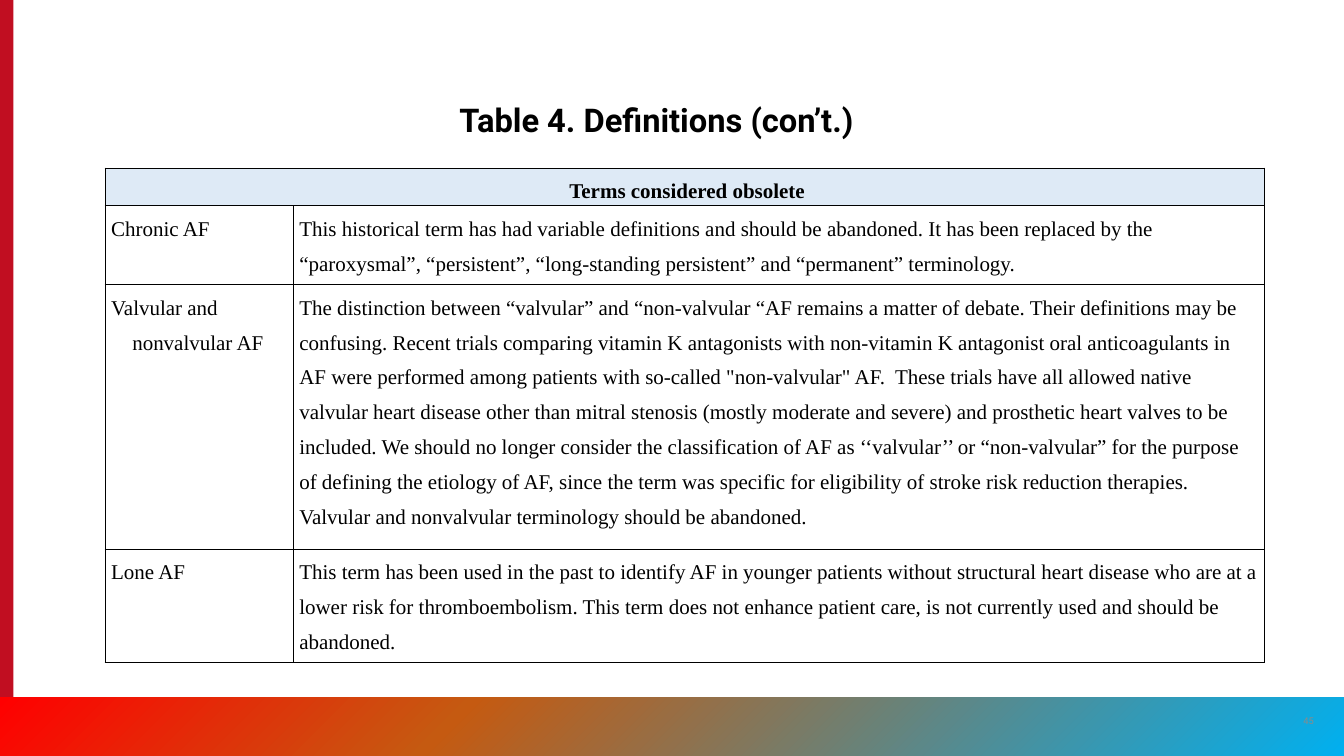
import lxml.etree
import pptx
import pptx.dml.color
import pptx.enum.shapes
import pptx.enum.text
import pptx.oxml
import pptx.oxml.ns
import pptx.util

Cm = pptx.util.Cm
Pt = pptx.util.Pt
ALIGN = pptx.enum.text.PP_ALIGN
ANCHOR = pptx.enum.text.MSO_ANCHOR
RECTANGLE = pptx.enum.shapes.MSO_SHAPE.RECTANGLE
SLIDE_WIDTH, SLIDE_HEIGHT = 40.64, 22.86
BAND_HEIGHT = 1.78
COLUMN_WIDTHS = (5.69, 29.36)
ROW_HEIGHTS = (0.81, 2.39, 3.3, 2.39)
HEADING = " Terms considered obsolete"
TERMS = (
    ("Chronic AF",
     "This historical term has had variable definitions and should be abandoned. "
     "It has been replaced by the “paroxysmal”, “persistent”, “long-standing persistent” "
     "and “permanent” terminology."),
    ("Valvular and nonvalvular AF",
     "The distinction between “valvular” and “non-valvular “AF remains a matter of debate. "
     "Their definitions may be confusing. Recent trials comparing vitamin K antagonists with "
     "non-vitamin K antagonist oral anticoagulants in AF were performed among patients with "
     "so-called \"non-valvular\" AF.  These trials have all allowed native valvular heart "
     "disease other than mitral stenosis (mostly moderate and severe) and prosthetic heart "
     "valves to be included. We should no longer consider the classification of AF as "
     "‘‘valvular’’ or “non-valvular” for the purpose of defining the etiology of AF, since the "
     "term was specific for eligibility of stroke risk reduction therapies. Valvular and "
     "nonvalvular terminology should be abandoned. "),
    ("Lone AF",
     "This term has been used in the past to identify AF in younger patients without "
     "structural heart disease who are at a lower risk for thromboembolism. This term does "
     "not enhance patient care, is not currently used and should be abandoned."),
)


def color(value):
    """Return the colour for a hex string."""
    return pptx.dml.color.RGBColor.from_string(value)


def style_font(paragraph, name, size, value, bold=False):
    """Set the font of a whole paragraph."""
    font = paragraph.font
    font.name, font.size, font.bold = name, Pt(size), bold
    font.color.rgb = color(value)


def add_block(slide, left, top, width, height):
    """Add a rectangle without line or shadow."""
    shape = slide.shapes.add_shape(RECTANGLE, Cm(left), Cm(top), Cm(width), Cm(height))
    shape.shadow.inherit = False
    shape.line.fill.background()
    return shape


def add_side_bar(slide, left, top, width, height):
    """Add the red bar on the left edge."""
    bar = add_block(slide, left, top, width, height)
    bar.fill.solid()
    bar.fill.fore_color.rgb = color("C10E21")


def add_bottom_band(slide, left, top, width, height):
    """Add the gradient band along the bottom."""
    band = add_block(slide, left, top, width, height)
    band.rotation = 180
    band.fill.gradient()
    band.fill.gradient_angle = 315
    first, last = band.fill.gradient_stops
    first.color.rgb, first.position = color("00B0F0"), 0
    last.color.rgb, last.position = color("FF0000"), 1
    stops = band.fill._fill._gradFill.find(pptx.oxml.ns.qn("a:gsLst"))
    stops.insert(1, pptx.oxml.parse_xml(
        f'<a:gs {pptx.oxml.ns.nsdecls("a")} pos="66000"><a:srgbClr val="C55A11"/></a:gs>'))


def add_page_number(slide, left, top, size):
    """Add the page number in a square box."""
    frame = slide.shapes.add_textbox(Cm(left), Cm(top), Cm(size), Cm(size)).text_frame
    frame.word_wrap = True
    frame.vertical_anchor = ANCHOR.MIDDLE
    paragraph = frame.paragraphs[0]
    paragraph.text = "45"
    paragraph.alignment = ALIGN.CENTER
    style_font(paragraph, "Roboto", 8, "8A8B8A")


def fill_title(slide, left, top, width, height):
    """Place and fill the title placeholder."""
    title = slide.shapes.title
    title.left, title.top, title.width, title.height = map(Cm, (left, top, width, height))
    frame = title.text_frame
    frame.auto_size = pptx.enum.text.MSO_AUTO_SIZE.NONE
    frame.vertical_anchor = ANCHOR.BOTTOM
    paragraph = frame.paragraphs[0]
    paragraph.text = "Table 4. Definitions (con’t.)"
    paragraph.alignment = ALIGN.LEFT
    paragraph.line_spacing = 0.9
    style_font(paragraph, "Roboto", 28, "000000", True)


def format_cell(cell, fill=None):
    """Set the margins, borders and fill of a table cell."""
    cell.margin_left = cell.margin_right = Cm(0.18)
    cell.margin_top = cell.margin_bottom = 0
    properties = cell._tc.get_or_add_tcPr()
    for side in "LRTB":
        properties.append(pptx.oxml.parse_xml(
            f'<a:ln{side} {pptx.oxml.ns.nsdecls("a")} w="12700"><a:solidFill>'
            f'<a:srgbClr val="000000"/></a:solidFill></a:ln{side}>'))
    if fill:
        cell.fill.solid()
        cell.fill.fore_color.rgb = color(fill)
    else:
        cell.fill.background()


def write_cell(cell, text, heading=False, hanging=False):
    """Write one paragraph into a table cell."""
    paragraph = cell.text_frame.paragraphs[0]
    paragraph.text = text
    paragraph.line_spacing = 1.5
    if heading:
        paragraph.alignment = ALIGN.CENTER
    else:
        paragraph.space_before, paragraph.space_after = Pt(6), Pt(14)
    if hanging:
        properties = paragraph._p.get_or_add_pPr()
        properties.set("marL", str(Cm(0.64)))
        properties.set("indent", str(-Cm(0.64)))
    style_font(paragraph, "Times New Roman", 18, "000000", heading)


def add_terms_table(slide, left, top, width, height):
    """Add the table of obsolete terms."""
    graphic = slide.shapes.add_table(
        len(ROW_HEIGHTS), len(COLUMN_WIDTHS), Cm(left), Cm(top), Cm(width), Cm(height))
    table = graphic.table
    table.first_row = table.horz_banding = False
    for column, column_width in zip(table.columns, COLUMN_WIDTHS):
        column.width = Cm(column_width)
    for row, row_height in zip(table.rows, ROW_HEIGHTS):
        row.height = Cm(row_height)
    graphic.height = Cm(height)
    for index, row in enumerate(table.rows):
        for cell in row.cells:
            format_cell(cell, "DEEAF6" if index == 0 else None)
    table.cell(0, 0).merge(table.cell(0, 1))
    write_cell(table.cell(0, 0), HEADING, heading=True)
    for index, (term, definition) in enumerate(TERMS, 1):
        write_cell(table.cell(index, 0), term, hanging=True)
        write_cell(table.cell(index, 1), definition)


def main():
    """Build and save the presentation."""
    presentation = pptx.Presentation()
    presentation.slide_width, presentation.slide_height = Cm(SLIDE_WIDTH), Cm(SLIDE_HEIGHT)
    slide = presentation.slides.add_slide(presentation.slide_layouts[0])
    subtitle = slide.placeholders[1].element
    subtitle.getparent().remove(subtitle)
    band_top = SLIDE_HEIGHT - BAND_HEIGHT
    add_side_bar(slide, 0, 0, 0.41, SLIDE_HEIGHT)
    add_bottom_band(slide, 0, band_top, SLIDE_WIDTH, BAND_HEIGHT)
    add_page_number(slide, 38.96, band_top + 0.1, 1.22)
    fill_title(slide, 13.64, 2.54, 13.34, 1.8)
    add_terms_table(slide, 3.18, 5.08, sum(COLUMN_WIDTHS), 14.55)
    presentation.save("out.pptx")


if __name__ == "__main__":
    main()
